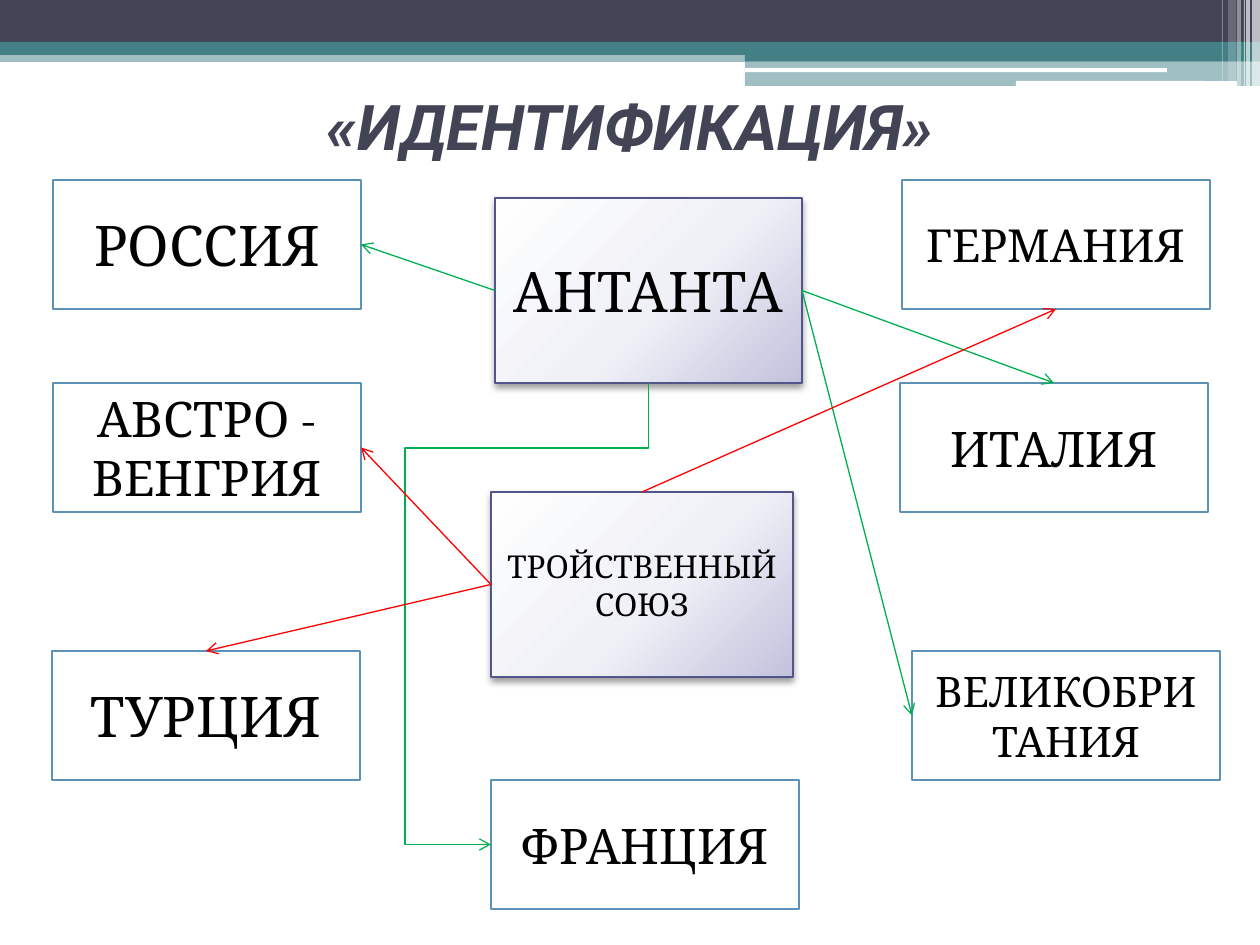
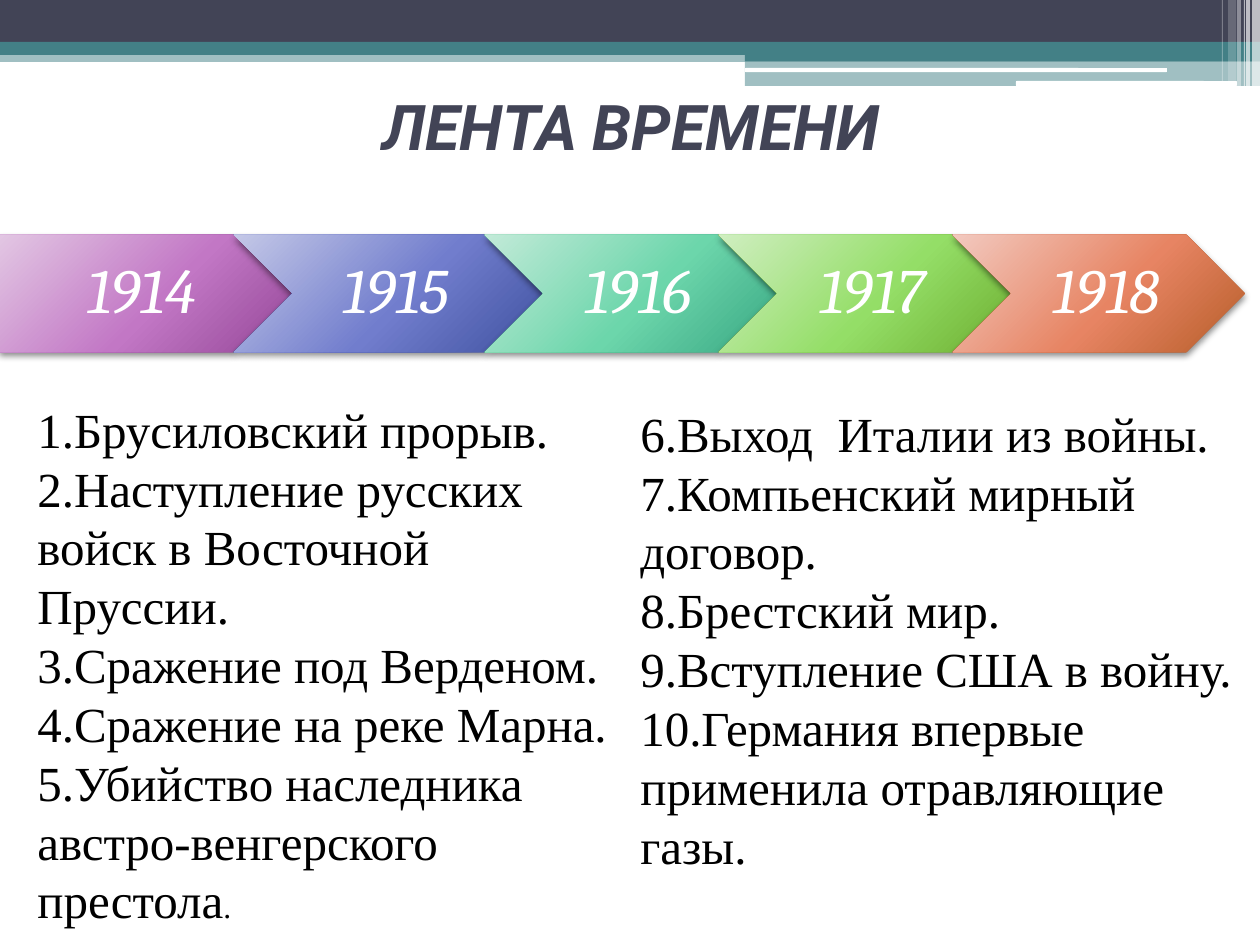
from lxml import etree
from pptx import Presentation
from pptx.dml.color import RGBColor
from pptx.enum.shapes import MSO_CONNECTOR, MSO_SHAPE
from pptx.enum.text import MSO_ANCHOR, PP_ALIGN
from pptx.oxml import parse_xml
from pptx.oxml.ns import nsdecls, qn
from pptx.util import Pt

RECT, ROUND_RECT = MSO_SHAPE.RECTANGLE, MSO_SHAPE.ROUNDED_RECTANGLE
PENTAGON, CHEVRON = MSO_SHAPE.PENTAGON, MSO_SHAPE.CHEVRON
STRAIGHT, ELBOW = MSO_CONNECTOR.STRAIGHT, MSO_CONNECTOR.ELBOW
MIDDLE, CENTER = MSO_ANCHOR.MIDDLE, PP_ALIGN.CENTER
TOP, LEFT, BOTTOM, RIGHT = range(4)  # connection sites of a rectangle

NAVY = RGBColor(0x42, 0x44, 0x56)
TEAL = RGBColor(0x43, 0x80, 0x86)
WHITE = RGBColor(0xFF, 0xFF, 0xFF)
BLACK = RGBColor(0, 0, 0)
BOX_BLUE = RGBColor(0x5C, 0x92, 0xB5)
BLOC_VIOLET = RGBColor(0x53, 0x54, 0x8A)
GREEN = RGBColor(0x00, 0xB0, 0x50)
RED = RGBColor(0xFF, 0, 0)

TITLE_FONT, DIAGRAM_FONT, LIST_FONT = "Roboto", "Cambria", "Times New Roman"
PX = 914400 / 126
SLIDE_W, SLIDE_H = 1260, 945

# kind, left, top, width, height, colour, opacity %
BANDS = [
    (RECT, 0, 50, 1260, 12, TEAL, 50),
    (RECT, 0, 0, 1260, 42, NAVY, 100),
    (RECT, 0, 42, 1260, 13, TEAL, 100),
    (RECT, 745, 49, 515, 12, TEAL, 100),
    (RECT, 745, 61, 515, 25, TEAL, 50),
    (ROUND_RECT, 745, 68, 422, 4, WHITE, 100),
    (ROUND_RECT, 1016, 81, 221, 5, WHITE, 100),
    (RECT, 1252, 0, 8, 86, WHITE, 65),
    (RECT, 1246, 0, 4, 86, WHITE, 65),
    (RECT, 1244, 0, 1, 86, WHITE, 60),
    (RECT, 1237, 0, 4, 86, WHITE, 40),
    (RECT, 1228, 0, 8, 81, WHITE, 20),
    (RECT, 1222, 0, 1, 81, WHITE, 30),
]

# name: left, top, font size
COUNTRY_W, COUNTRY_H = 308, 129
COUNTRIES = {
    "АВСТРО - ВЕНГРИЯ": (53, 383, 28),
    "ГЕРМАНИЯ": (902, 180, 26),
    "ИТАЛИЯ": (900, 383, 28),
    "ТУРЦИЯ": (52, 651, 32),
    "ФРАНЦИЯ": (491, 780, 28),
    "ВЕЛИКОБРИТАНИЯ": (912, 651, 24),
    "РОССИЯ": (53, 180, 32),
}
# name: left, top, width, font size
BLOC_H = 185
BLOCS = {
    "АНТАНТА": (495, 198, 307, 32),
    "ТРОЙСТВЕННЫЙ СОЮЗ": (491, 492, 302, 18),
}
BLOC_GRADIENT = ("FEFEFE", "F0F1F7", "C2C2DD")
# bloc, site, country, site, colour, connector kind
ALLIANCES = [
    ("АНТАНТА", LEFT, "РОССИЯ", RIGHT, GREEN, STRAIGHT),
    ("АНТАНТА", RIGHT, "ВЕЛИКОБРИТАНИЯ", LEFT, GREEN, STRAIGHT),
    ("АНТАНТА", RIGHT, "ИТАЛИЯ", TOP, GREEN, STRAIGHT),
    ("АНТАНТА", BOTTOM, "ФРАНЦИЯ", LEFT, GREEN, ELBOW),
    ("ТРОЙСТВЕННЫЙ СОЮЗ", LEFT, "АВСТРО - ВЕНГРИЯ", RIGHT, RED, STRAIGHT),
    ("ТРОЙСТВЕННЫЙ СОЮЗ", TOP, "ГЕРМАНИЯ", BOTTOM, RED, STRAIGHT),
    ("ТРОЙСТВЕННЫЙ СОЮЗ", LEFT, "ТУРЦИЯ", TOP, RED, STRAIGHT),
]
ELBOW_BENDS = {"adj1": 14100, "adj2": 154600}

# year, width, gradient
YEARS = [
    ("1914", 292, ("E2C6E3", "C277C5", "954898")),
    ("1915", 309, ("C4C8E7", "717DCD", "4052A0")),
    ("1916", 292, ("C2EAD8", "6CD6AB", "39A783")),
    ("1917", 292, ("CFEEC0", "94DE67", "6EAF31")),
    ("1918", 292, ("F2C9BF", "E78463", "B75E2A")),
]
YEAR_TOP, YEAR_H = 235, 117
YEAR_TIP = YEAR_H // 2

# left, top, width, height, lines
EVENT_COLUMNS = [
    (25, 393, 615, 547, [
        "1.Брусиловский прорыв.",
        "2.Наступление русских войск в Восточной Пруссии.",
        "3.Сражение под Верденом.",
        "4.Сражение на реке Марна.",
        "5.Убийство наследника австро-венгерского престола.",
    ]),
    (628, 397, 630, 488, [
        "6.Выход  Италии из войны.",
        "7.Компьенский мирный договор.",
        "8.Брестский мир.",
        "9.Вступление США в войну.",
        "10.Германия впервые применила отравляющие газы.",
    ]),
]


def px(*lengths):
    return [round(length * PX) for length in lengths]


def style(run, font, size, color, bold=False, italic=False):
    run.font.name, run.font.size = font, Pt(size)
    run.font.bold, run.font.italic = bold, italic
    run.font.color.rgb = color


def add_block(slide, kind, box, fill=None, line=None, line_width=1.5):
    block = slide.shapes.add_shape(kind, *px(*box))
    block.shadow.inherit = False
    if fill is None:
        block.fill.background()
    else:
        block.fill.solid()
        block.fill.fore_color.rgb = fill
    if line is None:
        block.line.fill.background()
    else:
        block.line.color.rgb = line
        block.line.width = Pt(line_width)
    return block


def add_label(block, text, size, color=BLACK, italic=False):
    block.text_frame.text = text
    block.text_frame.vertical_anchor = MIDDLE
    paragraph = block.text_frame.paragraphs[0]
    paragraph.alignment = CENTER
    style(paragraph.runs[0], DIAGRAM_FONT, size, color, italic=italic)


def add_glossy_block(slide, kind, box, gradient, shadow_opacity, line=None):
    """Block without a plain fill, given a radial gradient and a soft shadow below."""
    block = add_block(slide, kind, box, line=line, line_width=0.75)
    stops = "".join(
        f'<a:gs pos="{position}000"><a:srgbClr val="{color}"/></a:gs>'
        for position, color in zip((0, 55, 100), gradient))
    properties = block.element.spPr
    properties.replace(properties.find(qn("a:noFill")), parse_xml(
        f'<a:gradFill {nsdecls("a")} rotWithShape="1"><a:gsLst>{stops}</a:gsLst>'
        '<a:path path="circle"><a:fillToRect l="-40000" t="-90000" r="140000" b="190000"/>'
        '</a:path></a:gradFill>'))
    properties.find(qn("a:effectLst")).append(parse_xml(
        f'<a:outerShdw {nsdecls("a")} blurRad="51500" dist="25400" dir="5400000" '
        'rotWithShape="0"><a:srgbClr val="000000">'
        f'<a:alpha val="{shadow_opacity}000"/></a:srgbClr></a:outerShdw>'))
    return block


def bend_around(connector):
    """Leave downwards, pass left of the target and enter it from the left."""
    drop = connector.end_y - connector.begin_y
    back = connector.begin_x - connector.end_x
    center_x = (connector.begin_x + connector.end_x) // 2
    center_y = (connector.begin_y + connector.end_y) // 2
    frame = connector.element.spPr.find(qn("a:xfrm"))
    frame.attrib.pop("flipH", None)
    frame.set("rot", "5400000")
    connector.left, connector.top = center_x - drop // 2, center_y - back // 2
    connector.width, connector.height = drop, back
    geometry = connector.element.spPr.find(qn("a:prstGeom"))
    geometry.set("prst", "bentConnector4")
    guides = geometry.find(qn("a:avLst"))
    for name, value in ELBOW_BENDS.items():
        etree.SubElement(guides, qn("a:gd"), name=name, fmla=f"val {value}")


def add_arrow(slide, source, source_site, target, target_site, color, kind):
    connector = slide.shapes.add_connector(kind, 0, 0, 0, 0)
    connector.begin_connect(source, source_site)
    connector.end_connect(target, target_site)
    if kind == ELBOW:
        bend_around(connector)
    connector.line.color.rgb = color
    connector.line.width = Pt(0.75)
    properties = connector.element.spPr
    etree.SubElement(properties.find(qn("a:ln")), qn("a:tailEnd"), type="arrow")
    etree.SubElement(properties, qn("a:effectLst"))


def add_slide(deck, title, title_width):
    """Blank slide with the shared bands and a centred title."""
    slide = deck.slides.add_slide(deck.slide_layouts[6])
    for kind, *box, color, opacity in BANDS:
        band = add_block(slide, kind, box, color)
        if opacity < 100:
            tint = band.element.spPr.find(qn("a:solidFill"))[0]
            etree.SubElement(tint, qn("a:alpha"), val=f"{opacity}000")
    heading = slide.shapes.add_textbox(
        *px((SLIDE_W - title_width) // 2 + 1, 86, title_width, 79)).text_frame
    heading.word_wrap = True
    heading.vertical_anchor = MIDDLE
    heading.text = title
    heading.paragraphs[0].alignment = CENTER
    style(heading.paragraphs[0].runs[0], TITLE_FONT, 36, NAVY, bold=True, italic=True)
    return slide


def build_alliances(deck):
    slide = add_slide(deck, "«ИДЕНТИФИКАЦИЯ»", 1211)
    blocks = {}
    for name, (left, top, size) in COUNTRIES.items():
        blocks[name] = add_block(
            slide, RECT, (left, top, COUNTRY_W, COUNTRY_H), WHITE, BOX_BLUE)
        add_label(blocks[name], name, size)
    for name, (left, top, width, size) in BLOCS.items():
        blocks[name] = add_glossy_block(
            slide, RECT, (left, top, width, BLOC_H), BLOC_GRADIENT, 40, BLOC_VIOLET)
        add_label(blocks[name], name, size)
    for bloc, bloc_site, country, country_site, color, kind in ALLIANCES:
        add_arrow(slide, blocks[bloc], bloc_site, blocks[country], country_site, color, kind)


def build_timeline(deck):
    slide = add_slide(deck, "ЛЕНТА ВРЕМЕНИ", 1134)
    left = 0
    for index, (year, width, gradient) in enumerate(YEARS):
        kind, inset = (CHEVRON, 20) if index else (PENTAGON, 26)
        block = add_glossy_block(slide, kind, (left, YEAR_TOP, width, YEAR_H), gradient, 45)
        add_label(block, year, 36, WHITE, italic=True)
        frame = block.text_frame
        frame.margin_left, frame.margin_right = px(inset, 6)
        frame.margin_top, frame.margin_bottom = px(13, 13)
        frame.paragraphs[0].line_spacing = 0.9
        left += width - YEAR_TIP

    for *box, events in EVENT_COLUMNS:
        frame = slide.shapes.add_textbox(*px(*box)).text_frame
        frame.word_wrap = True
        frame.text = "\n".join(events)
        for paragraph in frame.paragraphs:
            style(paragraph.runs[0], LIST_FONT, 28, BLACK)
        if box[0] == EVENT_COLUMNS[0][0]:
            ending = frame.paragraphs[-1]
            ending.runs[0].text = events[-1].rstrip(".")
            full_stop = ending.add_run()
            full_stop.text = "."
            style(full_stop, LIST_FONT, 18, BLACK)


def main():
    deck = Presentation()
    deck.slide_width, deck.slide_height = px(SLIDE_W, SLIDE_H)
    build_alliances(deck)
    build_timeline(deck)
    deck.save("out.pptx")


if __name__ == "__main__":
    main()
